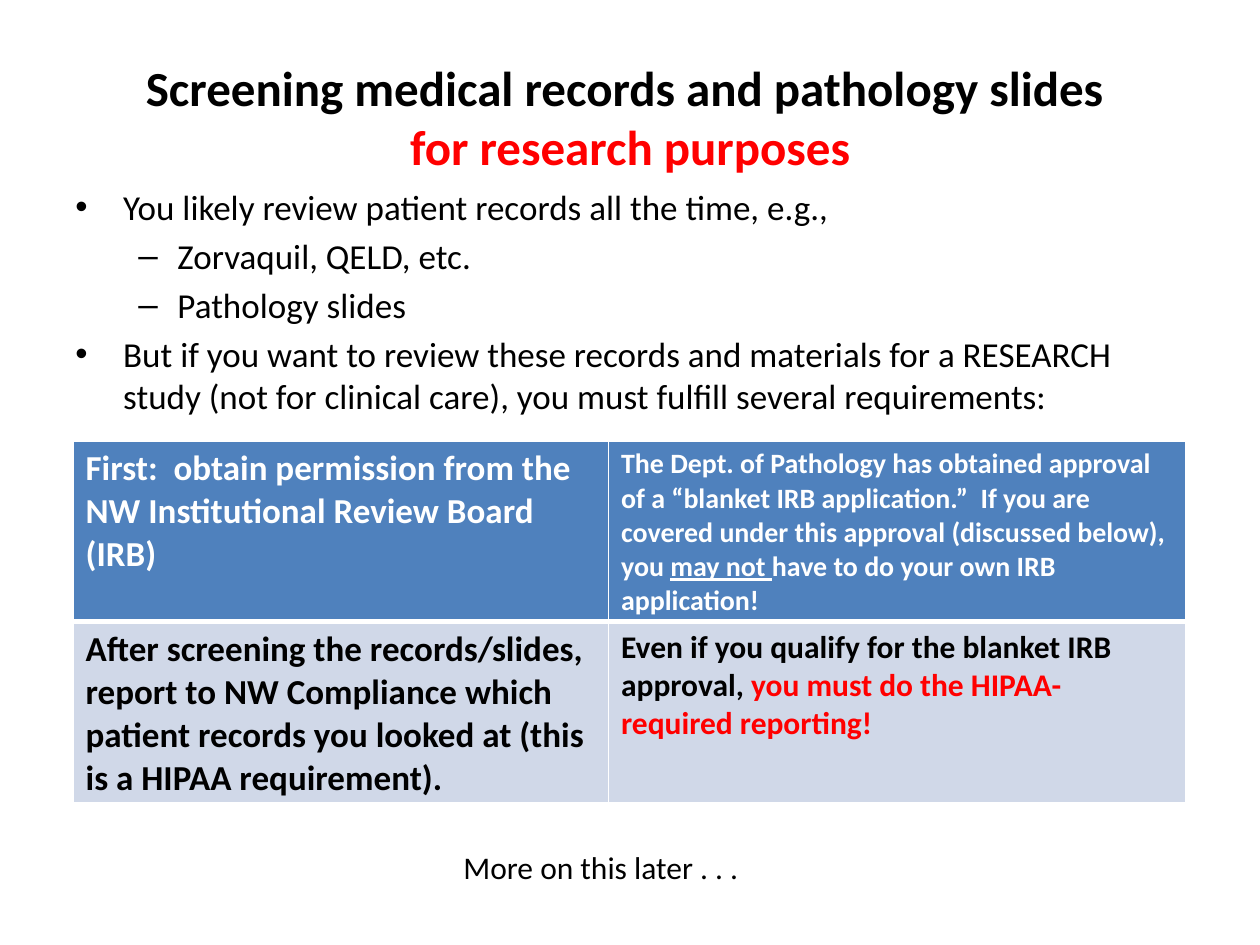
from copy import deepcopy
from dataclasses import dataclass

from lxml.etree import SubElement
from pptx import Presentation
from pptx.dml.color import RGBColor as RGB
from pptx.enum.text import MSO_ANCHOR as Anchor, MSO_AUTO_SIZE as AutoSize, PP_ALIGN as Align
from pptx.oxml.ns import qn
from pptx.util import Inches, Pt


@dataclass(frozen=True)
class Theme:
    """Fonts, colours and type sizes of the slide."""
    font: str = "Calibri"
    black: str = "000000"
    white: str = "FFFFFF"
    red: str = "FF0000"
    header: str = "4F81BD"
    band: str = "D0D8E8"
    title: int = 28
    body: int = 20
    note: int = 18
    small: int = 16


T = Theme()

BULLETS = [
    (0, "You likely review patient records all the time, e.g.,"),
    (1, "Zorvaquil, QELD, etc."),
    (1, "Pathology slides"),
    (0, "But if you want to review these records and materials for a RESEARCH study "
        "(not for clinical care), you must fulfill several requirements:"),
]
BULLET_STYLES = [("•", 0.38, -0.38), ("–", 0.81, -0.31)]

HEADER_ROW = [
    (1, T.body, [("First:  obtain permission from the NW Institutional Review Board (IRB)", {})]),
    (0, T.small, [
        ("The Dept. of Pathology has obtained approval of a “blanket IRB application.”  "
         "If you are covered under this approval (discussed below), you ", {}),
        ("may not ", {"underline": True}),
        ("have to do your own IRB application!", {}),
    ]),
]
REPORT_ROW = [
    (1, T.body, [("After screening the records/slides, report to NW Compliance which patient "
                  "records you looked at (this is a HIPAA requirement).", {})]),
    (0, T.note, [
        ("Even if you qualify for the blanket IRB approval, ", {}),
        ("you must do the HIPAA-required reporting!", {"color": T.red}),
    ]),
]
ROWS = [(T.header, T.white, 3, HEADER_ROW), (T.band, T.black, 1, REPORT_ROW)]


def add_run(p, text, size, color=T.black, **fmt):
    """Append a formatted run to a paragraph."""
    r = p.add_run()
    r.text = text
    for name, value in {"name": T.font, "size": Pt(size), **fmt}.items():
        setattr(r.font, name, value)
    r.font.color.rgb = RGB.from_string(color)
    return r


def add_title(s):
    """Fill the title placeholder with its two coloured lines."""
    sp = s.shapes.title
    box = {"left": 0.5, "top": 0.3, "width": 9, "height": 1.25}
    for name, value in box.items():
        setattr(sp, name, Inches(value))
    tf = sp.text_frame
    tf.vertical_anchor = Anchor.MIDDLE
    p = tf.paragraphs[0]
    p.alignment = Align.CENTER
    r = add_run(p, "Screening medical records and pathology slides ", T.title, bold=True)
    p.add_line_break()
    p._p[-1].append(deepcopy(r._r.rPr))
    add_run(p, "for research purposes", T.title, T.red, bold=True)


def add_bullets(s, items):
    """Add the two-level bullet list."""
    tf = s.shapes.add_textbox(Inches(0.5), Inches(1.42), Inches(9), Inches(3.33)).text_frame
    tf.word_wrap = True
    for i, (level, text) in enumerate(items):
        p = tf.add_paragraph() if i else tf.paragraphs[0]
        char, margin, indent = BULLET_STYLES[level]
        p.level = level
        p.space_before = Pt(T.body * 0.2)
        pPr = p._p.get_or_add_pPr()
        pPr.set("marL", str(Inches(margin)))
        pPr.set("indent", str(Inches(indent)))
        SubElement(pPr, qn("a:buFont"), typeface="Arial")
        SubElement(pPr, qn("a:buChar"), char=char)
        add_run(p, text, T.body)


def add_borders(cell, **widths):
    """Draw white cell borders, with widths in points by side."""
    tcPr = cell._tc.get_or_add_tcPr()
    for side, width in widths.items():
        ln = SubElement(tcPr, qn(f"a:ln{side}"), w=str(Pt(width)))
        SubElement(SubElement(ln, qn("a:solidFill")), qn("a:srgbClr"), val=T.white)


def fill_cell(cell, level, size, runs, color):
    """Write bold runs into a table cell."""
    p = cell.text_frame.paragraphs[0]
    p.level = level
    p._p.get_or_add_pPr().set("marL", "0")
    for text, fmt in runs:
        add_run(p, text, size, **{"color": color, "bold": True, **fmt})


def add_requirements(s):
    """Add the table of research requirements."""
    table = s.shapes.add_table(len(ROWS), 2, Inches(0.58), Inches(3.5),
                               Inches(8.83), Inches(2.87)).table
    for col, width in zip(table.columns, (4.25, 4.58)):
        col.width = Inches(width)
    top = 1
    for row, (fill, color, bottom, cells) in zip(table.rows, ROWS):
        for cell, (level, size, runs) in zip(row.cells, cells):
            add_borders(cell, L=1, R=1, T=top, B=bottom)
            cell.fill.solid()
            cell.fill.fore_color.rgb = RGB.from_string(fill)
            fill_cell(cell, level, size, runs, color)
        top = bottom


def add_note(s, text):
    """Add the closing note under the table."""
    tf = s.shapes.add_textbox(Inches(3.58), Inches(6.68), Inches(2.47), Inches(0.4)).text_frame
    tf.word_wrap = False
    tf.auto_size = AutoSize.SHAPE_TO_FIT_TEXT
    add_run(tf.paragraphs[0], text, T.note)


def main():
    """Build the slide and save it."""
    prs = Presentation()
    prs.slide_width, prs.slide_height = Inches(10), Inches(7.5)
    s = prs.slides.add_slide(prs.slide_layouts[5])
    add_title(s)
    add_bullets(s, BULLETS)
    add_requirements(s)
    add_note(s, "More on this later . . .")
    prs.save("out.pptx")


if __name__ == "__main__":
    main()
